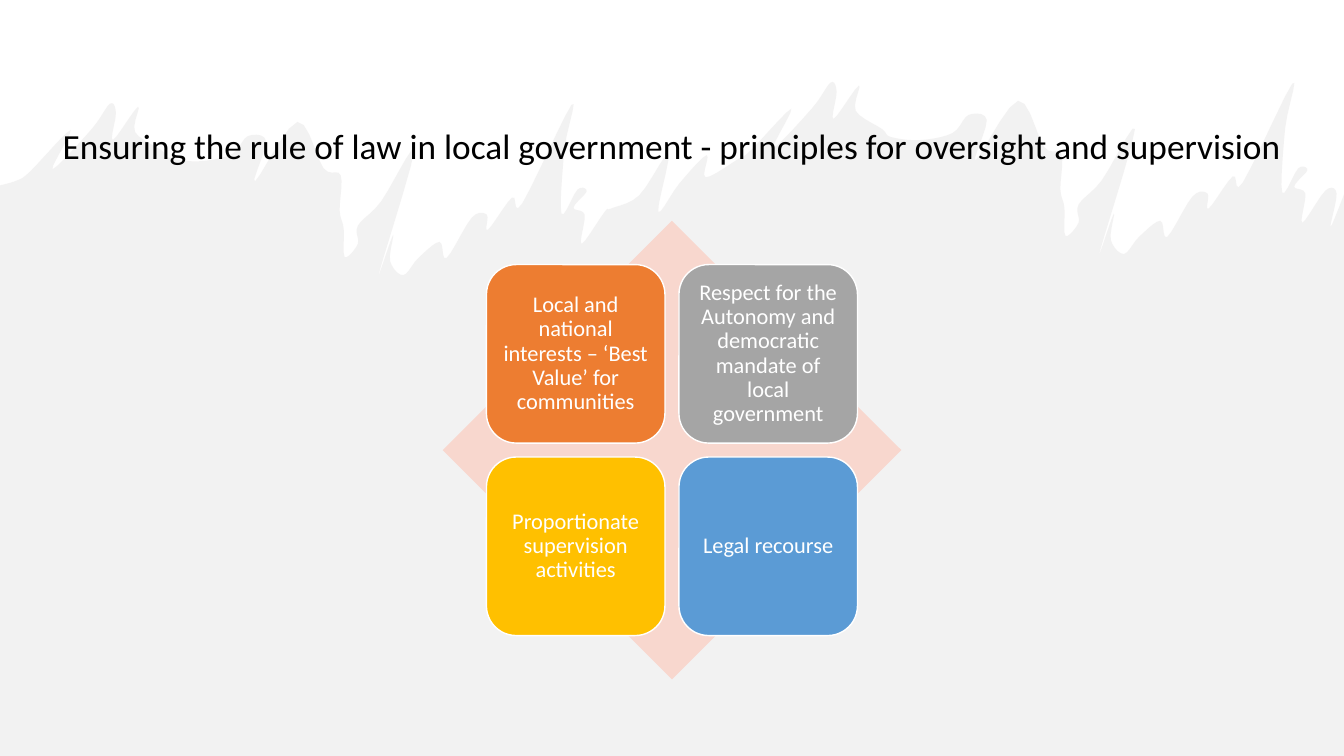
import pptx
import pptx.util
import pptx.dml.color
import pptx.enum.shapes
import pptx.enum.text
import pptx.oxml.ns
from lxml import etree

Pt = pptx.util.Pt
SHAPES = pptx.enum.shapes.MSO_SHAPE

TITLE = "Ensuring the rule of law in local government - principles for oversight and supervision"
PRINCIPLES = [
    [("Local and national interests – ‘Best Value’ for communities", "orange"),
     ("Respect for the Autonomy and democratic mandate of local government", "gray")],
    [("Proportionate supervision activities", "gold"),
     ("Legal recourse", "blue")],
]
COLORS = {
    "orange": "ED7D31", "gray": "A5A5A5", "gold": "FFC000", "blue": "5B9BD5",
    "diamond": "F8D7CE", "backdrop": "E7E6E6", "white": "FFFFFF", "black": "000000",
}
FONT = "Calibri"
SLIDE_W, SLIDE_H = 960, 540

# Turning points of the torn edge, in brush units.
BRUSH_UNIT = 0.72  # points
BRUSH_SHIFT = (-715, 21)  # the same stroke again, further left and lower
CURVE_STEPS = 5
BRUSH = [
    (732, 158), (745, 149), (785, 108), (767, 147), (806, 107), (824, 82),
    (830, 91), (827, 118), (852, 85), (849, 110), (875, 128), (884, 136),
    (913, 139), (945, 132), (961, 114), (979, 119), (968, 159), (1010, 100),
    (1036, 146), (1053, 153), (1052, 188), (1056, 206), (1057, 234), (1070, 221),
    (1070, 203), (1093, 179), (1126, 128), (1091, 250), (1105, 212), (1102, 238),
    (1115, 252), (1130, 235), (1151, 219), (1158, 235), (1183, 195), (1198, 192),
    (1199, 207), (1223, 175), (1233, 181), (1282, 83), (1275, 127), (1272, 191),
    (1288, 167), (1297, 169), (1284, 185), (1295, 192), (1292, 221), (1315, 189),
]
LEFT_EDGE = [(0, 184)]
MIDDLE = [(606, 207), (634, 194), (663, 153), (653, 210), (674, 182), (701, 154), (700, 176)]
RIGHT_EDGE = [(1326, 192), (1320, 225), (1333.33, 193)]


def rgb(name):
    return pptx.dml.color.RGBColor.from_string(COLORS[name])


def smooth(points):
    """Return a Catmull-Rom curve through the points, as a dense list of points."""
    padded = [points[0], *points, points[-1]]
    curve = [points[0]]
    for knots in zip(padded, padded[1:], padded[2:], padded[3:]):
        for step in range(1, CURVE_STEPS + 1):
            t = step / CURVE_STEPS
            curve.append(tuple(
                b + t * (c - a) / 2
                + t**2 * (2 * a - 5 * b + 4 * c - d) / 2
                + t**3 * (3 * b - a - 3 * c + d) / 2
                for a, b, c, d in zip(*knots)))
    return curve


def paint(shape, color):
    shape.shadow.inherit = False
    shape.fill.solid()
    shape.fill.fore_color.rgb = rgb(color)
    shape.line.fill.background()


def write(shape, text, size, color, insets):
    """Set centred text; insets are left, top, right, bottom in points."""
    frame = shape.text_frame
    frame.text = text
    frame.word_wrap = True
    frame.vertical_anchor = pptx.enum.text.MSO_ANCHOR.MIDDLE
    (frame.margin_left, frame.margin_top,
     frame.margin_right, frame.margin_bottom) = map(Pt, insets)
    paragraph = frame.paragraphs[0]
    paragraph.alignment = pptx.enum.text.PP_ALIGN.CENTER
    paragraph.line_spacing = 0.9
    font = paragraph.runs[0].font
    font.name, font.size = FONT, Pt(size)
    font.color.rgb = rgb(color)


def add_backdrop(slide):
    dx, dy = BRUSH_SHIFT
    left_brush = [(x + dx, y + dy) for x, y in BRUSH]
    edge = smooth(LEFT_EDGE + left_brush + MIDDLE + BRUSH + RIGHT_EDGE)
    outline = [(Pt(x * BRUSH_UNIT), Pt(y * BRUSH_UNIT)) for x, y in edge]
    outline += [(Pt(SLIDE_W), Pt(SLIDE_H)), (0, Pt(SLIDE_H))]
    builder = slide.shapes.build_freeform(*outline[0])
    builder.add_line_segments(outline[1:], close=True)
    backdrop = builder.convert_to_shape()
    paint(backdrop, "backdrop")
    fill_color = backdrop.element.spPr.find(".//" + pptx.oxml.ns.qn("a:srgbClr"))
    etree.SubElement(fill_color, pptx.oxml.ns.qn("a:alpha"), val="50000")


def add_matrix(slide):
    center_x, center_y = SLIDE_W / 2, 321.5
    diamond_side, tile_side, gap = 327.6, 127.5, 10
    diamond = slide.shapes.add_shape(
        SHAPES.DIAMOND, Pt(center_x - diamond_side / 2), Pt(center_y - diamond_side / 2),
        Pt(diamond_side), Pt(diamond_side))
    paint(diamond, "diamond")
    pitch = tile_side + gap
    offset = tile_side + gap / 2
    for row, principles in enumerate(PRINCIPLES):
        for column, (principle, color) in enumerate(principles):
            tile = slide.shapes.add_shape(
                SHAPES.ROUNDED_RECTANGLE,
                Pt(center_x - offset + column * pitch), Pt(center_y - offset + row * pitch),
                Pt(tile_side), Pt(tile_side))
            paint(tile, color)
            tile.line.color.rgb = rgb("white")
            tile.line.width = Pt(1)
            write(tile, principle, 16, "white", (5, 5, 5, 5))


def main():
    deck = pptx.Presentation()
    deck.slide_width, deck.slide_height = Pt(SLIDE_W), Pt(SLIDE_H)
    slide = deck.slides.add_slide(deck.slide_layouts[6])
    add_backdrop(slide)
    title = slide.shapes.add_textbox(Pt(24), Pt(75.6), Pt(912), Pt(104.4))
    write(title, TITLE, 25.2, "black", (7.2, 3.6, 7.2, 48))
    add_matrix(slide)
    deck.save("out.pptx")


if __name__ == "__main__":
    main()
